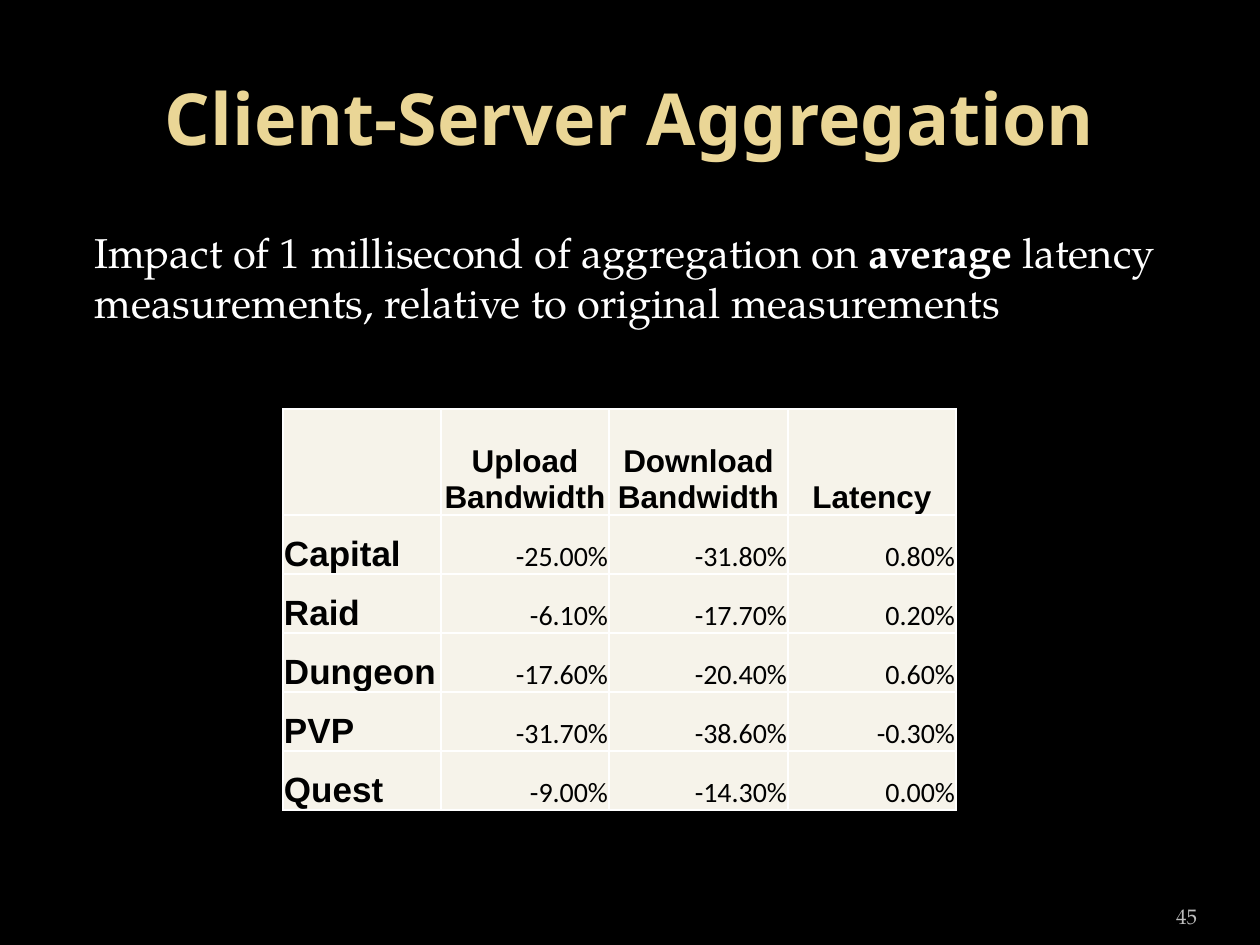
from dataclasses import dataclass

from lxml.etree import SubElement
from pptx import Presentation
from pptx.dml.color import RGBColor
from pptx.enum.text import MSO_ANCHOR, PP_ALIGN
from pptx.oxml.ns import qn
from pptx.util import Pt

EMU_PER_PX = 914400 / 126


@dataclass(frozen=True)
class Theme:
    background: str = "000000"
    cell_fill: str = "F6F3EA"
    border: str = "FFFFFF"
    border_width: int = 1
    title = {"size": 41, "name": "Noto Sans", "color": "EAD696", "bold": True}
    body = {"size": 23.8, "name": "TeX Gyre Pagella", "color": "FFFFFF", "bold": False}
    number = {"size": 12, "name": "TeX Gyre Pagella", "color": "BDBDBD", "bold": False}
    header = {"size": 18, "name": "Arial", "color": "000000", "bold": True}
    row_label = {"size": 20, "name": "Arial", "color": "000000", "bold": True}
    value = {"size": 16, "name": "Calibri", "color": "000000", "bold": False}


THEME = Theme()

COLUMN_WIDTHS = [158, 168, 179, 168]
HEADER_HEIGHT, ROW_HEIGHT = 106, 59
ROWS = [
    ["", "Upload Bandwidth", "Download Bandwidth", "Latency"],
    ["Capital", "-25.00%", "-31.80%", "0.80%"],
    ["Raid", "-6.10%", "-17.70%", "0.20%"],
    ["Dungeon", "-17.60%", "-20.40%", "0.60%"],
    ["PVP", "-31.70%", "-38.60%", "-0.30%"],
    ["Quest", "-9.00%", "-14.30%", "0.00%"],
]


def px(length):
    return round(length * EMU_PER_PX)


def set_attributes(target, values):
    for name, value in values.items():
        setattr(target, name, value)


def add_run(paragraph, text, style):
    run = paragraph.add_run()
    run.text = text
    values = {**style, "size": Pt(style["size"])}
    run.font.color.rgb = RGBColor.from_string(values.pop("color"))
    set_attributes(run.font, values)


def add_text(slide, box, runs, alignment, frame_format):
    """Add a text box at box (left, top, width, height) with (text, style) runs."""
    frame = slide.shapes.add_textbox(*map(px, box)).text_frame
    set_attributes(frame, {"word_wrap": True, **frame_format})
    paragraph = frame.paragraphs[0]
    paragraph.alignment = alignment
    for text, style in runs:
        add_run(paragraph, text, style)
    return paragraph


def add_borders(cell):
    properties = cell._tc.get_or_add_tcPr()
    for index, side in enumerate(("lnL", "lnR", "lnT", "lnB")):
        line = SubElement(properties, qn(f"a:{side}"), w=str(Pt(THEME.border_width)))
        fill = SubElement(line, qn("a:solidFill"))
        SubElement(fill, qn("a:srgbClr"), val=THEME.border)
        properties.insert(index, line)


def cell_style(row, column):
    if row == 0:
        return THEME.header, PP_ALIGN.CENTER
    if column == 0:
        return THEME.row_label, PP_ALIGN.LEFT
    return THEME.value, PP_ALIGN.RIGHT


def fill_cell(cell, text, style, alignment):
    cell.fill.solid()
    cell.fill.fore_color.rgb = RGBColor.from_string(THEME.cell_fill)
    set_attributes(cell, {
        "vertical_anchor": MSO_ANCHOR.BOTTOM,
        "margin_left": px(1), "margin_right": px(1),
        "margin_top": px(1), "margin_bottom": 0,
    })
    add_borders(cell)
    if text:
        paragraph = cell.text_frame.paragraphs[0]
        paragraph.alignment = alignment
        add_run(paragraph, text, style)


def add_impact_table(slide, left, top):
    heights = [HEADER_HEIGHT] + [ROW_HEIGHT] * (len(ROWS) - 1)
    table = slide.shapes.add_table(
        len(ROWS), len(COLUMN_WIDTHS), px(left), px(top),
        px(sum(COLUMN_WIDTHS)), px(sum(heights))).table
    for column, width in zip(table.columns, COLUMN_WIDTHS):
        column.width = px(width)
    for row, height in zip(table.rows, heights):
        row.height = px(height)
    for r, texts in enumerate(ROWS):
        for c, text in enumerate(texts):
            fill_cell(table.cell(r, c), text, *cell_style(r, c))


def main():
    presentation = Presentation()
    set_attributes(presentation, {"slide_width": px(1260), "slide_height": px(945)})
    slide = presentation.slides.add_slide(presentation.slide_layouts[6])
    slide.background.fill.solid()
    slide.background.fill.fore_color.rgb = RGBColor.from_string(THEME.background)

    add_text(slide, (63, 38, 1134, 157), [("Client-Server Aggregation", THEME.title)],
             PP_ALIGN.CENTER, {"vertical_anchor": MSO_ANCHOR.MIDDLE})
    add_text(slide, (1092, 885, 105, 50), [("45", THEME.number)], PP_ALIGN.RIGHT,
             {"vertical_anchor": MSO_ANCHOR.BOTTOM, "margin_left": 0, "margin_right": 0})
    statement = add_text(slide, (63, 221, 1134, 116), [
        ("Impact of 1 millisecond of aggregation on ", THEME.body),
        ("average", {**THEME.body, "bold": True}),
        (" latency measurements, relative to original measurements", THEME.body),
    ], PP_ALIGN.LEFT, {"margin_left": px(32)})
    statement.space_before = Pt(5)
    add_impact_table(slide, 283, 409)
    presentation.save("out.pptx")


if __name__ == "__main__":
    main()
